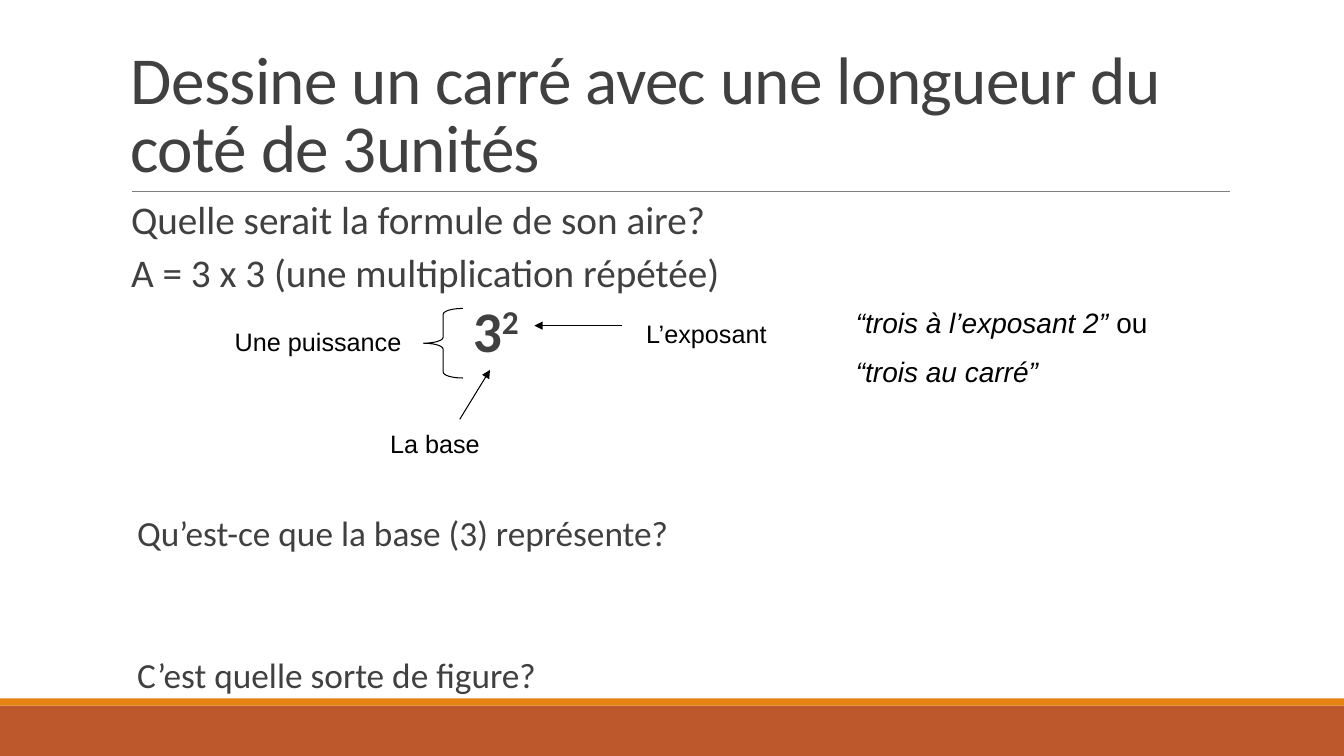
from dataclasses import dataclass

from lxml.etree import SubElement
from pptx import Presentation
from pptx.dml.color import RGBColor
from pptx.enum.shapes import MSO_CONNECTOR as Connector, MSO_SHAPE as Shape
from pptx.enum.text import MSO_ANCHOR as Anchor, PP_ALIGN as Align
from pptx.oxml.ns import qn
from pptx.util import Inches, Pt


@dataclass(frozen=True)
class Theme:
    """Colours, fonts and type sizes of the lesson."""
    footer: str = "BD582C"
    accent: str = "E48312"
    rule: str = "808080"
    text: str = "404040"
    ink: str = "000000"
    body_font: str = "Calibri"
    label_font: str = "Arial"
    title_size: float = 48
    formula_size: float = 28
    power_size: float = 41
    question_size: float = 25.2
    label_size: float = 18
    reading_size: float = 20


class LessonSlide:
    """Draws styled elements on one slide."""

    def __init__(self, slide, theme):
        self.shapes = slide.shapes
        self.theme = theme

    def band(self, top, height, color):
        """Add a full-width band."""
        band = self.shapes.add_shape(Shape.RECTANGLE, 0, Inches(top), Inches(13.33), Inches(height))
        band.shadow.inherit = False
        band.fill.solid()
        band.fill.fore_color.rgb = RGBColor.from_string(color)
        band.line.fill.background()

    def brace(self, left, top, width, height):
        """Add an outlined left brace."""
        brace = self.shapes.add_shape(
            Shape.LEFT_BRACE, Inches(left), Inches(top), Inches(width), Inches(height))
        brace.shadow.inherit = False
        brace.adjustments[0] = 0.15
        brace.fill.background()
        brace.line.color.rgb = RGBColor.from_string(self.theme.ink)
        brace.line.width = Pt(0.75)

    def line(self, start, end, color, width, arrow=False):
        """Add a straight line, with an arrowhead at its end if asked."""
        line = self.shapes.add_connector(Connector.STRAIGHT, *map(Inches, start + end))
        line.line.color.rgb = RGBColor.from_string(color)
        line.line.width = Pt(width)
        if arrow:
            SubElement(line.line._get_or_add_ln(), qn("a:tailEnd"), type="triangle")
        SubElement(line._element.spPr, qn("a:effectLst"))

    def text_box(self, left, top, width, height, side_inset=0.1, anchor=Anchor.TOP):
        """Add a wrapping text box and return its frame."""
        frame = self.shapes.add_textbox(
            Inches(left), Inches(top), Inches(width), Inches(height)).text_frame
        frame.word_wrap = True
        frame.vertical_anchor = anchor
        frame.margin_left = frame.margin_right = Inches(side_inset)
        return frame

    def paragraph(self, frame, texts, size, font, color, before=0, after=0,
                  spacing=1.0, indent=0, align=Align.LEFT):
        """Fill the next paragraph of a frame and return its runs."""
        first = frame.paragraphs[0]
        paragraph = frame.add_paragraph() if first.runs else first
        paragraph.alignment = align
        paragraph.line_spacing = spacing
        paragraph.space_before, paragraph.space_after = Pt(before), Pt(after)
        if indent:
            paragraph._p.get_or_add_pPr().set("marL", str(Inches(indent)))
        for text in texts:
            run = paragraph.add_run()
            run.text = text
            run.font.size = Pt(size)
            run.font.name = font
            run.font.color.rgb = RGBColor.from_string(color)
        return paragraph.runs

    def title(self, text):
        """Add the slide title."""
        style = self.theme
        frame = self.text_box(1.2, 0.31, 11, 1.59, anchor=Anchor.BOTTOM)
        run, = self.paragraph(frame, [text], style.title_size, style.body_font, style.text,
                              spacing=0.85)
        run.font._element.set("spc", "-50")

    def body(self, rows):
        """Add the body and return the runs of each row."""
        style = self.theme
        frame = self.text_box(1.2, 2.02, 11, 4.4, side_inset=0)
        return [self.paragraph(frame, texts, size, style.body_font, style.text, before,
                               after=2, spacing=0.7, indent=indent)
                for texts, size, before, indent in rows]

    def label(self, text, left, top, width, align=Align.LEFT):
        """Add a label of the diagram."""
        style = self.theme
        frame = self.text_box(left, top, width, 0.4)
        self.paragraph(frame, [text], style.label_size, style.label_font, style.ink, align=align)

    def readings(self, rows):
        """Add the ways to read the power, the first run of each in italics."""
        style = self.theme
        frame = self.text_box(8.39, 2.98, 3.36, 0.93)
        for order, texts in enumerate(rows):
            runs = self.paragraph(frame, texts, style.reading_size, style.label_font, style.ink,
                                  before=11 * order)
            runs[0].font.italic = True


def main():
    """Build the lesson on powers."""
    theme = Theme()
    deck = Presentation()
    deck.slide_width, deck.slide_height = Inches(13.33), Inches(7.5)
    lesson = LessonSlide(deck.slides.add_slide(deck.slide_layouts[6]), theme)

    lesson.band(7, 0.5, theme.footer)
    lesson.band(6.93, 0.07, theme.accent)
    lesson.line((1.31, 1.9), (12.2, 1.9), theme.rule, 0.5)
    lesson.title("Dessine un carré avec une longueur du coté de 3unités")
    body = lesson.body([
        (["Quelle serait la formule de son aire?"], theme.formula_size, 0, 0.1),
        (["A = 3 x 3 (une multiplication répétée)"], theme.formula_size, 12, 0.1),
        (["3", "2"], theme.power_size, 12, 3.49),
        (["Qu’est-ce que la base (3) représente?"], theme.question_size, 113, 0.16),
        (["C’est quelle sorte de figure?"], theme.question_size, 78, 0.16),
    ])
    base, exponent = body[2]
    base.font.bold = exponent.font.bold = True
    exponent.font._element.set("baseline", "30000")

    lesson.line((4.56, 4.16), (4.86, 3.67), theme.ink, 0.75, arrow=True)
    lesson.label("La base", 3.77, 4.2, 1.44)
    lesson.line((6.17, 3.23), (5.3, 3.23), theme.ink, 0.75, arrow=True)
    lesson.label("L’exposant", 6.31, 3.11, 1.92)
    lesson.brace(4.2, 3.06, 0.39, 0.69)
    lesson.label("Une puissance", 1.88, 3.19, 2.2, Align.RIGHT)
    lesson.readings([["“trois à l’exposant 2” ", "ou"], ["“trois au carré”"]])
    deck.save("out.pptx")


if __name__ == "__main__":
    main()
